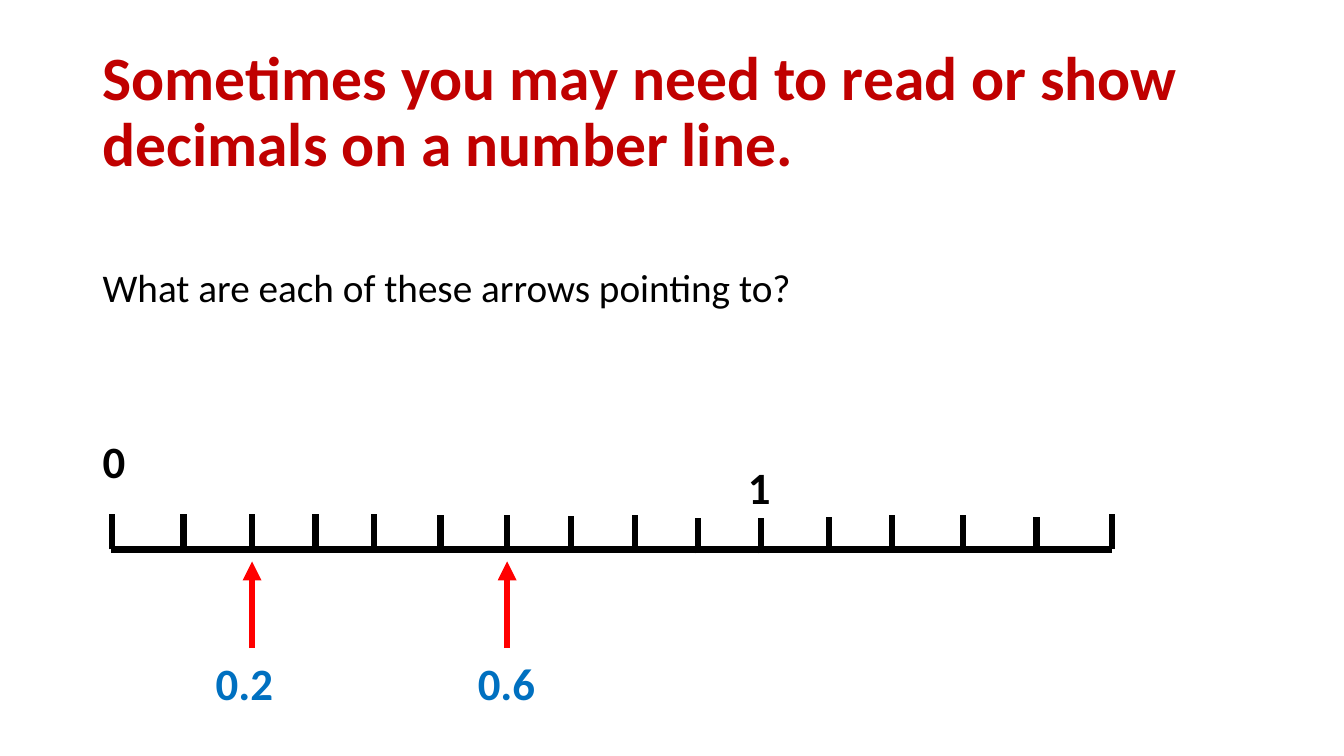
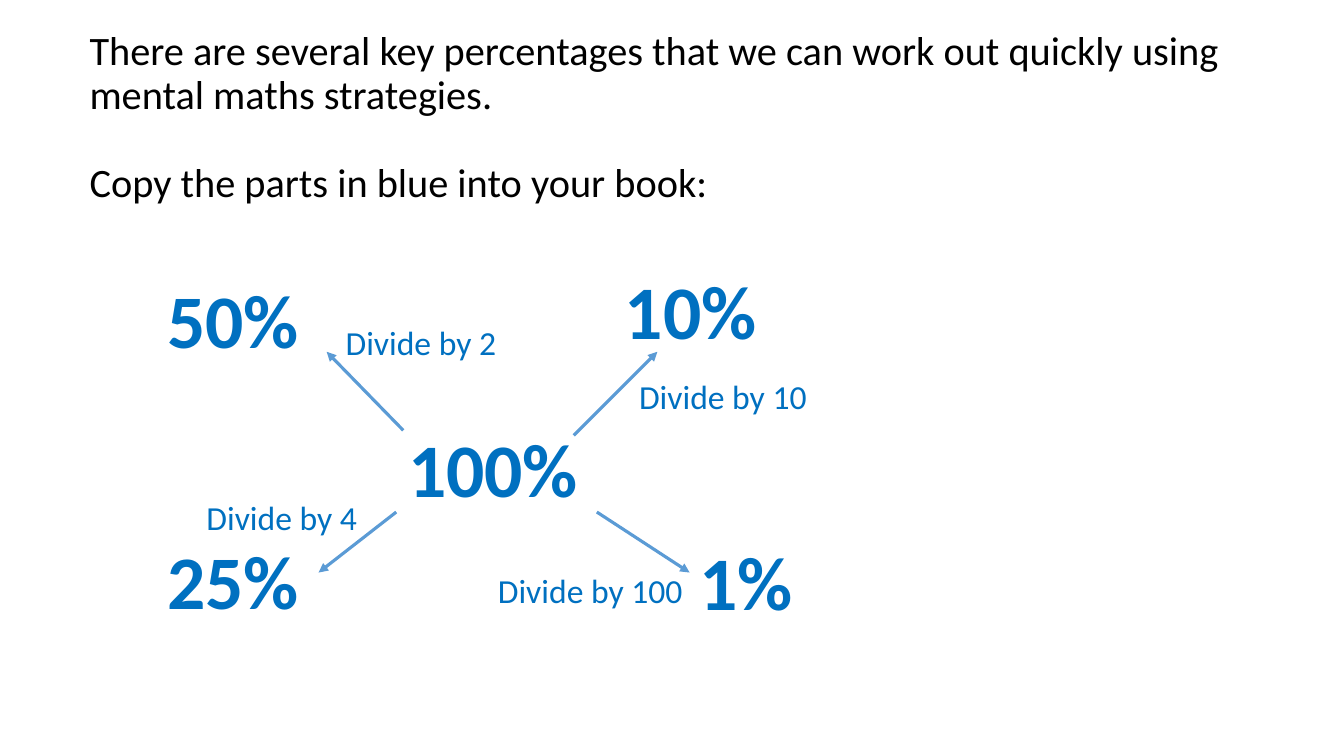
from lxml.etree import SubElement
from pptx import Presentation
from pptx.dml.color import RGBColor
from pptx.enum.shapes import MSO_CONNECTOR
from pptx.enum.text import MSO_ANCHOR
from pptx.oxml.ns import qn
from pptx.util import Inches, Pt

FONT = "Calibri"
BLACK = "000000"
DARK_RED = "C00000"
RED = "FF0000"
BLUE = "0070C0"
LIGHT_BLUE = "5B9BD5"


def color(hex_text):
    return RGBColor.from_string(hex_text)


class Deck:
    """Holds the shared style and the current slide."""

    def __init__(self):
        self.presentation = Presentation()
        self.presentation.slide_width = Inches(13.33)
        self.presentation.slide_height = Inches(7.5)
        self.slide = None

    def add_slide(self):
        self.slide = self.presentation.slides.add_slide(self.presentation.slide_layouts[6])

    def text(self, box, content, size, fill=BLACK, bold=False,
             anchor=MSO_ANCHOR.TOP, line_spacing=1.0, gap=0):
        shape = self.slide.shapes.add_textbox(*(Inches(value) for value in box))
        frame = shape.text_frame
        frame.word_wrap = True
        frame.vertical_anchor = anchor
        frame.text = content
        for index, paragraph in enumerate(frame.paragraphs):
            paragraph.line_spacing = line_spacing
            paragraph.space_before = Pt(gap if index else 0)
            for run in paragraph.runs:
                run.font.name = FONT
                run.font.size = Pt(size)
                run.font.bold = bold
                run.font.color.rgb = color(fill)

    def title(self, box, content):
        self.text(box, content, 44, DARK_RED, True, MSO_ANCHOR.MIDDLE, 0.9)

    def body(self, box, content, size):
        self.text(box, content, size, line_spacing=0.9, gap=32)

    def number(self, left, top, content, width=0.56, fill=BLACK):
        self.text((left, top, width, 0.64), content, 32, fill, True)

    def percentage(self, left, top, content, width=1.69):
        self.text((left, top, width, 1.45), content, 54, BLUE, True, MSO_ANCHOR.MIDDLE, 0.9)

    def instruction(self, left, top, content):
        self.text((left, top, 2.17, 0.5), content, 24, BLUE)

    def line(self, start, end, fill=BLACK, width=4.5):
        connector = self.slide.shapes.add_connector(
            MSO_CONNECTOR.STRAIGHT, *(Inches(value) for value in (*start, *end)))
        connector.line.color.rgb = color(fill)
        connector.line.width = Pt(width)
        SubElement(connector._element.spPr, qn("a:effectLst"))
        return connector

    def arrow(self, start, end, fill, width):
        connector = self.line(start, end, fill, width)
        SubElement(connector.line._get_or_add_ln(), qn("a:tailEnd"), type="triangle")


def number_line_slide(deck):
    deck.add_slide()
    deck.title((0.92, 0.4, 11.5, 1.45),
               "Sometimes you may need to read or show decimals on a number line.")
    deck.body((0.92, 2.62, 11.5, 1.26), "What are each of these arrows pointing to?", 28)

    ticks = [
        (1.11, 5.45), (1.82, 5.45), (2.5, 5.45), (3.13, 5.45),
        (3.71, 5.45), (4.37, 5.46), (5.03, 5.46), (5.66, 5.47),
        (6.3, 5.46), (6.92, 5.49), (7.55, 5.49), (8.22, 5.48),
        (8.85, 5.46), (9.55, 5.46), (10.28, 5.48), (11.03, 5.45),
    ]
    deck.line((1.1, 5.45), (11.03, 5.45))
    for x, bottom in ticks:
        deck.line((x, bottom), (x, bottom - 0.35))

    deck.number(0.92, 4.25, "0")
    deck.number(7.32, 4.51, "1")
    for tick, left, answer in ((2, 2.04, "0.2"), (6, 4.64, "0.6")):
        x = ticks[tick][0]
        deck.arrow((x, 6.43), (x, 5.57), RED, 4.5)
        deck.number(left, 6.46, answer, 1.09, BLUE)


def percentages_slide(deck):
    deck.add_slide()
    deck.body((0.79, 0.26, 11.5, 2.2),
              "There are several key percentages that we can work out quickly "
              "using mental maths strategies.\nCopy the parts in blue into your book:", 28.8)
    deck.percentage(3.95, 3.97, "100%", 2.37)

    branches = [
        ("50%", (1.56, 2.49), (4, 4.27), (3.24, 3.49), "Divide by 2", (3.33, 3.14)),
        ("10%", (6.1, 2.4), (5.69, 4.32), (6.52, 3.49), "Divide by 10", (6.24, 3.68)),
        ("25%", (1.56, 5.08), (3.93, 5.08), (3.16, 5.68), "Divide by 4", (1.95, 4.88)),
        ("1%", (6.84, 5.09), (5.92, 5.08), (6.84, 5.68), "Divide by 100", (4.84, 5.6)),
    ]
    for percentage, place, start, end, instruction, instruction_place in branches:
        deck.arrow(start, end, LIGHT_BLUE, 2.25)
        deck.percentage(*place, percentage)
        deck.instruction(*instruction_place, instruction)


def main():
    deck = Deck()
    number_line_slide(deck)
    percentages_slide(deck)
    deck.presentation.save("out.pptx")


if __name__ == "__main__":
    main()
